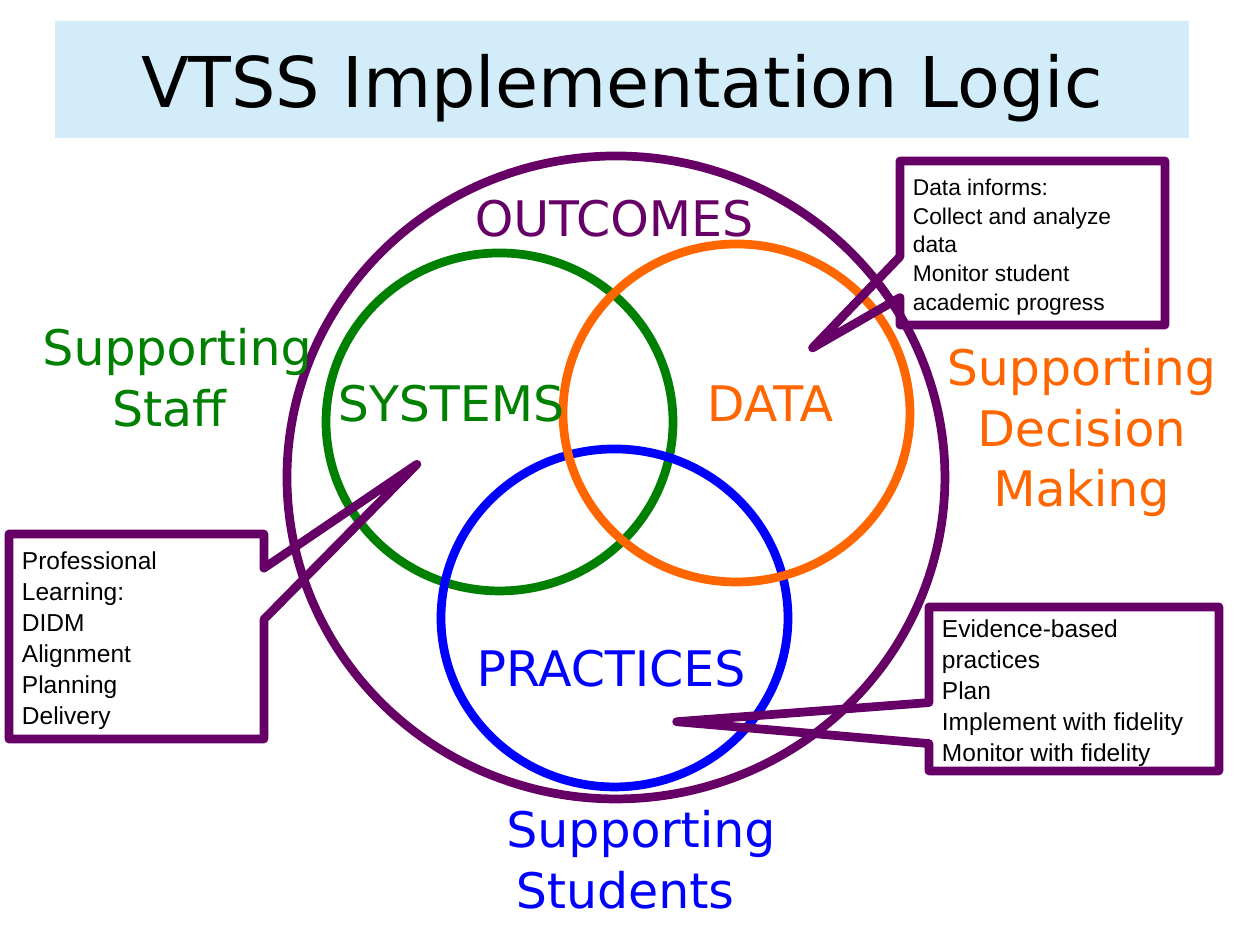
import dataclasses

import pptx
import pptx.dml.color
import pptx.enum.shapes
import pptx.enum.text
import pptx.util

Align = pptx.enum.text.PP_ALIGN
Anchor = pptx.enum.text.MSO_ANCHOR
Shape = pptx.enum.shapes.MSO_SHAPE


@dataclasses.dataclass(frozen=True)
class Theme:
    green: str = "008000"
    blue: str = "0000FF"
    orange: str = "FF6600"
    purple: str = "660066"
    black: str = "000000"
    band: str = "D2EDF9"
    head_font: str = "DejaVu Sans"
    note_font: str = "Arial"
    title_size: int = 40
    label_size: int = 28
    note_size: int = 14
    small_size: int = 13
    label_gap: float = 1.03
    note_gap: float = 1.05
    stroke: int = 5


THEME = Theme()


def px(n):
    return pptx.util.Emu(round(n * 914400 / 126))


def color(code):
    return pptx.dml.color.RGBColor.from_string(code)


def write(frame, lines, font, size, code, align, gap=1.0, pad=(13, 6)):
    """Fill a text frame with one paragraph per line."""
    frame.word_wrap = True
    frame.auto_size = pptx.enum.text.MSO_AUTO_SIZE.NONE
    frame.margin_left = frame.margin_right = px(pad[0])
    frame.margin_top = frame.margin_bottom = px(pad[1])
    frame.text = "\n".join(lines)
    for para in frame.paragraphs:
        para.alignment = align
        para.line_spacing = gap
        for run in para.runs:
            run.font.name = font
            run.font.size = pptx.util.Pt(size)
            run.font.color.rgb = color(code)


def add_title(slide, text):
    title = slide.shapes.title
    title.left, title.top, title.width, title.height = map(px, (55, 21, 1134, 117))
    title.fill.solid()
    title.fill.fore_color.rgb = color(THEME.band)
    write(title.text_frame, [text], THEME.head_font, THEME.title_size,
          THEME.black, Align.CENTER, pad=(13, 13))
    title.text_frame.vertical_anchor = Anchor.MIDDLE


def add_line_shape(shapes, kind, box, code):
    """Add an unfilled shape with a heavy outline."""
    shape = shapes.add_shape(kind, *map(px, box))
    shape.shadow.inherit = False
    shape.fill.background()
    shape.line.color.rgb = color(code)
    shape.line.width = pptx.util.Pt(THEME.stroke)
    return shape


def add_label(shapes, box, lines, code, align=Align.CENTER, shift=0):
    """Add a label; shift moves the lines after the first to the left."""
    left, top, width, height = box
    label = shapes.add_textbox(*map(px, (left, top, width - 2 * shift, height)))
    write(label.text_frame, lines, THEME.head_font, THEME.label_size,
          code, align, THEME.label_gap)
    if shift:
        first = label.text_frame.paragraphs[0]
        first._p.get_or_add_pPr().set("marL", str(px(2 * shift)))


def add_callout(shapes, box, tip, lines, size):
    note = add_line_shape(shapes, Shape.RECTANGULAR_CALLOUT, box, THEME.purple)
    note.adjustments[0], note.adjustments[1] = tip
    write(note.text_frame, lines, THEME.note_font, size, THEME.black,
          Align.LEFT, THEME.note_gap, (13, 13))
    note.text_frame.vertical_anchor = Anchor.MIDDLE


def add_venn(slide):
    shapes = slide.shapes.add_group_shape().shapes

    # Three equal circles inside the outcomes ring
    for left, top, code in ((326, 253, THEME.green), (441, 449, THEME.blue),
                            (563, 244, THEME.orange)):
        add_line_shape(shapes, Shape.OVAL, (left, top, 347, 338), code)
    add_line_shape(shapes, Shape.OVAL, (287, 156, 658, 643), THEME.purple)

    # Names of the circles
    add_label(shapes, (321, 365, 260, 72), ["SYSTEMS"], THEME.green)
    add_label(shapes, (451, 630, 320, 72), ["PRACTICES"], THEME.blue)
    add_label(shapes, (694, 365, 185, 72), ["DATA"], THEME.orange, Align.LEFT)

    # Who each circle supports
    add_label(shapes, (9, 309, 336, 190), ["Supporting", "Staff"],
              THEME.green, shift=8)
    add_label(shapes, (929, 329, 305, 190),
              ["Supporting", "Decision", "Making"], THEME.orange)
    add_label(shapes, (368, 791, 546, 131), ["Supporting", "Students"],
              THEME.blue, shift=16)
    add_label(shapes, (450, 180, 328, 72), ["OUTCOMES"], THEME.purple)


def main():
    deck = pptx.Presentation()
    deck.slide_width, deck.slide_height = px(1260), px(945)
    slide = deck.slides.add_slide(deck.slide_layouts[5])
    add_title(slide, "VTSS Implementation Logic")
    add_venn(slide)

    # Callouts pointing into the circles
    add_callout(slide.shapes, (900, 161, 265, 164), (-0.83, 0.64),
                ["Data informs:", "Collect and analyze data",
                 "Monitor student academic progress"], THEME.small_size)
    add_callout(slide.shapes, (929, 607, 290, 164), (-1.37, 0.2),
                ["Evidence-based practices", "Plan", "Implement with fidelity",
                 "Monitor with fidelity"], THEME.note_size)
    add_callout(slide.shapes, (9, 534, 255, 205), (1.1, -0.84),
                ["Professional Learning:", "DIDM", "Alignment", "Planning",
                 "Delivery"], THEME.note_size)

    deck.save("out.pptx")


if __name__ == "__main__":
    main()
